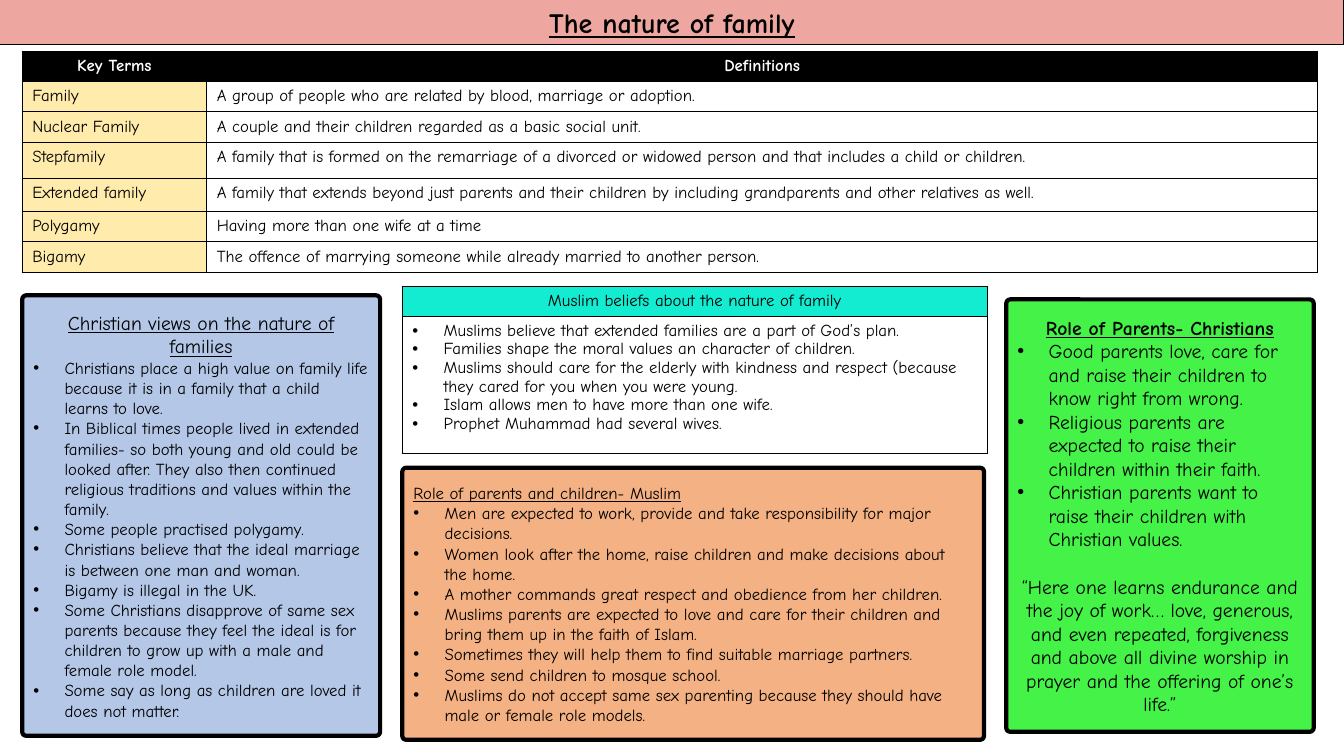
from dataclasses import dataclass

from lxml import etree
from pptx import Presentation
from pptx import util as u
from pptx.dml.color import RGBColor
from pptx.enum import shapes, text
from pptx.oxml.ns import qn


@dataclass(frozen=True)
class Theme:
    font: str = "Comic Neue"
    title: int = 20
    large: int = 14
    body: int = 12
    black: str = "000000"
    white: str = "FFFFFF"
    pink: str = "EEA7A0"
    yellow: str = "FFEBAB"
    blue: str = "B4C7E7"
    green: str = "44F248"
    teal: str = "14ECD2"
    orange: str = "F4B183"


T = Theme()
LEFT, CENTER = text.PP_ALIGN.LEFT, text.PP_ALIGN.CENTER
INDENT = 0.31
RADIUS = 0.04


@dataclass(frozen=True)
class Para:
    words: str
    size: int = T.body
    color: str = T.black
    align: text.PP_ALIGN = LEFT
    bold: bool = False
    underline: bool = False
    bullet: bool = False
    before: float = 0
    spacing: float = 1.0


@dataclass(frozen=True)
class Panel:
    box: tuple[float, float, float, float]
    fill: str
    paras: list[Para]
    line: float = 3
    rounded: bool = True


@dataclass(frozen=True)
class Cell:
    fill: str
    paras: list[Para]


@dataclass(frozen=True)
class Grid:
    at: tuple[float, float]
    widths: list[float]
    heights: list[float]
    rows: list[list[Cell]]


def bullets(items: list[str], size: int = T.body, spacing: float = 1.0) -> list[Para]:
    return [Para(i, size, bullet=True, spacing=spacing) for i in items]


def write(tf, paras: list[Para]) -> None:
    for n, para in enumerate(paras):
        p = tf.add_paragraph() if n else tf.paragraphs[0]
        p.text = para.words
        p.alignment = para.align
        p.line_spacing = para.spacing
        p.space_before = u.Pt(para.before)
        if para.bullet:
            pPr = p._p.get_or_add_pPr()
            pPr.set("marL", str(u.Inches(INDENT)))
            pPr.set("indent", str(-u.Inches(INDENT)))
            etree.SubElement(pPr, qn("a:buFont")).set("typeface", "Arial")
            etree.SubElement(pPr, qn("a:buChar")).set("char", "•")
        for r in p.runs:
            r.font.name = T.font
            r.font.size = u.Pt(para.size)
            r.font.bold = para.bold
            r.font.underline = para.underline
            r.font.color.rgb = RGBColor.from_string(para.color)


def draw_panel(s, panel: Panel) -> None:
    kind = shapes.MSO_SHAPE.ROUNDED_RECTANGLE if panel.rounded else shapes.MSO_SHAPE.RECTANGLE
    sp = s.shapes.add_shape(kind, *map(u.Inches, panel.box))
    if panel.rounded:
        sp.adjustments[0] = RADIUS / min(panel.box[2:])
    sp.shadow.inherit = False
    sp.fill.solid()
    sp.fill.fore_color.rgb = RGBColor.from_string(panel.fill)
    sp.line.color.rgb = RGBColor.from_string(T.black)
    sp.line.width = u.Pt(panel.line)
    tf = sp.text_frame
    tf.word_wrap = True
    tf.vertical_anchor = text.MSO_ANCHOR.MIDDLE
    write(tf, panel.paras)


def add_borders(tc) -> None:
    tcPr = tc.get_or_add_tcPr()
    for n, side in enumerate(("lnL", "lnR", "lnT", "lnB")):
        ln = etree.Element(qn(f"a:{side}"), w=str(u.Pt(1)))
        fill = etree.SubElement(ln, qn("a:solidFill"))
        etree.SubElement(fill, qn("a:srgbClr")).set("val", T.black)
        tcPr.insert(n, ln)


def draw_grid(s, grid: Grid) -> None:
    size = sum(grid.widths), sum(grid.heights)
    frame = s.shapes.add_table(len(grid.heights), len(grid.widths),
                               *map(u.Inches, grid.at + size))
    table = frame.table
    for col, width in zip(table.columns, grid.widths):
        col.width = u.Inches(width)
    for row, height, cells in zip(table.rows, grid.heights, grid.rows):
        row.height = u.Inches(height)
        for cell, content in zip(row.cells, cells):
            cell.fill.solid()
            cell.fill.fore_color.rgb = RGBColor.from_string(content.fill)
            add_borders(cell._tc)
            write(cell.text_frame, content.paras)


# Title bar and the three rounded panels
PANELS = [
    Panel((0, 0, 13.33, 0.44), T.pink, [
        Para("The nature of family", T.title, align=CENTER, bold=True, underline=True),
    ], line=0.75, rounded=False),
    Panel((0.22, 2.93, 3.55, 4.37), T.blue, [
        Para("Christian views on the nature of families", T.large, align=CENTER, underline=True),
        *bullets([
            "Christians place a high value on family life because it is in a family that a child learns to love.",
            "In Biblical times people lived in extended families- so both young and old could be looked after. "
            "They also then continued religious traditions and values within the family.",
            "Some people practised polygamy.",
            "Christians believe that the ideal marriage is between one man and woman.",
            "Bigamy is illegal in the UK.",
            "Some Christians disapprove of same sex parents because they feel the ideal is for children "
            "to grow up with a male and female role model.",
            "Some say as long as children are loved it does not matter.",
        ])]),
    Panel((9.98, 2.97, 3.05, 4.29), T.green, [
        Para("Role of Parents- Christians", T.large, align=CENTER, bold=True, underline=True),
        *bullets([
            "Good parents love, care for and raise their children to know right from wrong.",
            "Religious parents are expected to raise their children within their faith.",
            "Christian parents want to raise their children with Christian values.",
        ], T.large),
        Para("“Here one learns endurance and the joy of work… love, generous, and even repeated, forgiveness "
             "and above all divine worship in prayer and the offering of one’s life.”",
             T.large, align=CENTER, before=17)]),
    Panel((3.99, 4.64, 5.77, 2.7), T.orange, [
        Para("Role of parents and children- Muslim", underline=True),
        *bullets([
            "Men are expected to work, provide and take responsibility for major decisions.",
            "Women look after the home, raise children and make decisions about the home.",
            "A mother commands great respect and obedience from her children.",
            "Muslims parents are expected to love and care for their children and bring them up in the faith of Islam.",
            "Sometimes they will help them to find suitable marriage partners.",
            "Some send children to mosque school.",
            "Muslims do not accept same sex parenting because they should have male or female role models.",
        ])]),
]

# Key terms and Muslim beliefs tables
TERMS = {
    "Family": "A group of people who are related by blood, marriage or adoption.",
    "Nuclear Family": "A couple and their children regarded as a basic social unit.",
    "Stepfamily": "A family that is formed on the remarriage of a divorced or widowed person "
                  "and that includes a child or children.",
    "Extended family": "A family that extends beyond just parents and their children "
                       "by including grandparents and other relatives as well.",
    "Polygamy": "Having more than one wife at a time",
    "Bigamy": "The offence of marrying someone while already married to another person.",
}
GRIDS = [
    Grid((0.22, 0.51), [1.83, 11.02], [0.3, 0.3, 0.3, 0.36, 0.33, 0.3, 0.3], [
        [Cell(T.black, [Para(h, color=T.white, align=CENTER, bold=True)])
         for h in ("Key Terms", "Definitions")],
        *([Cell(T.yellow, [Para(term)]), Cell(T.white, [Para(meaning)])]
          for term, meaning in TERMS.items())]),
    Grid((3.99, 2.84), [5.8], [0.3, 1.36], [
        [Cell(T.teal, [Para("Muslim beliefs about the nature of family", align=CENTER)])],
        [Cell(T.white, bullets([
            "Muslims believe that extended families are a part of God’s plan.",
            "Families shape the moral values an character of children.",
            "Muslims should care for the elderly with kindness and respect (because they cared for you "
            "when you were young.",
            "Islam allows men to have more than one wife.",
            "Prophet Muhammad had several wives.",
        ], spacing=0.96))]]),
]


def main() -> None:
    prs = Presentation()
    prs.slide_width, prs.slide_height = u.Inches(13.33), u.Inches(7.5)
    s = prs.slides.add_slide(prs.slide_layouts[6])
    for panel in PANELS:
        draw_panel(s, panel)
    for grid in GRIDS:
        draw_grid(s, grid)
    prs.save("out.pptx")


if __name__ == "__main__":
    main()
